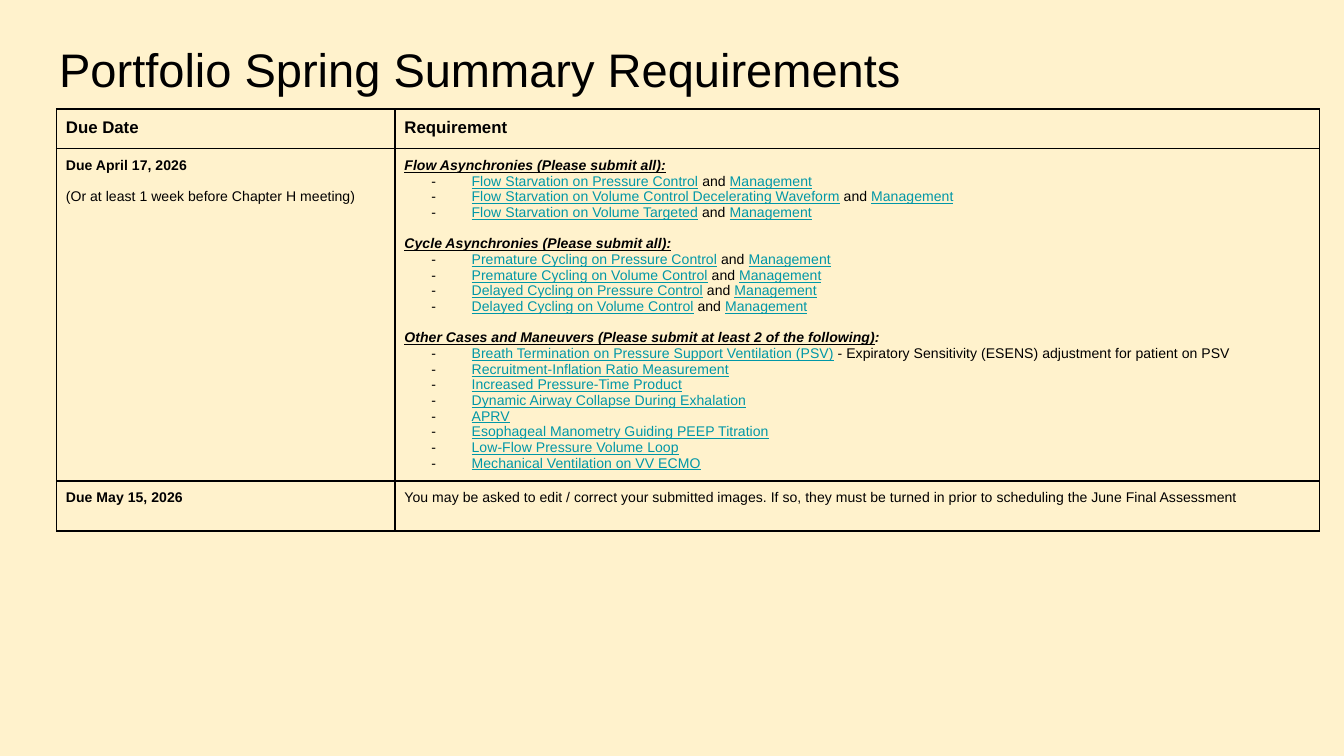
"""Build the slide of portfolio requirements and due dates."""
import pptx
import pptx.dml.color
import pptx.enum.text
import pptx.oxml
import pptx.oxml.ns
import pptx.util

Pt = pptx.util.Pt
INK, LINK, CREAM = "000000", "0097A7", "FFF2CC"
LINE = 8.4


def color(value):
    return pptx.dml.color.RGBColor.from_string(value)


def element(content):
    tag, rest = content.split(" ", 1)
    namespace = pptx.oxml.ns.nsdecls("a")
    return pptx.oxml.parse_xml(f"<a:{tag} {namespace} {rest}")


class Board:
    def __init__(self, deck, font="Arial"):
        self.font = font
        self.page = deck.slides.add_slide(deck.slide_layouts[5])
        self.page.background.fill.solid()
        self.page.background.fill.fore_color.rgb = color(CREAM)

    def span(self, para, text, size=7.5, ink=INK, **marks):
        span = para.add_run()
        span.text = text
        span.font.name, span.font.size = self.font, Pt(size)
        span.font.color.rgb = color(ink)
        for mark, value in marks.items():
            setattr(span.font, mark, value)

    def title(self, text, left, top, width, height):
        box = self.page.shapes.title
        box.left, box.top, box.width, box.height = map(Pt, (left, top, width, height))
        frame = box.text_frame
        frame.auto_size = pptx.enum.text.MSO_AUTO_SIZE.NONE
        frame.vertical_anchor = pptx.enum.text.MSO_ANCHOR.MIDDLE
        frame.margin_left = frame.margin_right = Pt(7.2)
        frame.margin_top = frame.margin_bottom = Pt(7.2)
        para = frame.paragraphs[0]
        para.alignment = pptx.enum.text.PP_ALIGN.LEFT
        self.span(para, text, 25.2)

    def table(self, left, top, widths, heights):
        frame = self.page.shapes.add_table(
            len(heights), len(widths), Pt(left), Pt(top), Pt(sum(widths)), Pt(sum(heights)))
        table = frame.table
        table.first_row = table.horz_banding = False
        for column, width in zip(table.columns, widths):
            column.width = Pt(width)
        for row, height in zip(table.rows, heights):
            row.height = Pt(height)
        for cell in table.iter_cells():
            self.outline(cell)
        return table

    def outline(self, cell):
        cell.margin_left = cell.margin_right = Pt(5)
        cell.margin_top = cell.margin_bottom = Pt(5)
        properties = cell._tc.get_or_add_tcPr()
        for side in ("lnL", "lnR", "lnT", "lnB"):
            properties.append(element(
                f'{side} w="{Pt(1)}"><a:solidFill><a:srgbClr val="{INK}"/>'
                f"</a:solidFill></a:{side}>"))
        cell.fill.background()

    def line(self, cell, gap=0):
        frame = cell.text_frame
        para = frame.add_paragraph() if frame.text else frame.paragraphs[0]
        para.line_spacing, para.space_before = Pt(LINE), Pt(gap)
        return para

    def heading(self, cell, text, tail, gap):
        para = self.line(cell, gap)
        self.span(para, text, bold=True, italic=True, underline=True)
        if tail:
            self.span(para, tail, bold=True, italic=True)

    def bullet(self, cell, link, note="", second=""):
        para = self.line(cell)
        properties = para._p.get_or_add_pPr()
        properties.set("marL", str(Pt(36)))
        properties.set("indent", str(-Pt(21.6)))
        properties.append(element(f'buClr ><a:srgbClr val="{INK}"/></a:buClr>'))
        properties.append(element(f'buFont typeface="{self.font}"/>'))
        properties.append(element('buChar char="-"/>'))
        self.span(para, link, ink=LINK, underline=True)
        if note:
            self.span(para, note)
        if second:
            self.span(para, second, ink=LINK, underline=True)


def managed(*names):
    return [(name, " and ", "Management") for name in names]


GROUPS = [
    ("Flow Asynchronies (Please submit all):", "", managed(
        "Flow Starvation on Pressure Control",
        "Flow Starvation on Volume Control Decelerating Waveform",
        "Flow Starvation on Volume Targeted")),
    ("Cycle Asynchronies (Please submit all):", "", managed(
        "Premature Cycling on Pressure Control",
        "Premature Cycling on Volume Control",
        "Delayed Cycling on Pressure Control",
        "Delayed Cycling on Volume Control")),
    ("Other Cases and Maneuvers (Please submit at least 2 of the following)", ":", [
        ("Breath Termination on Pressure Support Ventilation (PSV)",
         " - Expiratory Sensitivity (ESENS) adjustment for patient on PSV"),
        ("Recruitment-Inflation Ratio Measurement",),
        ("Increased Pressure-Time Product",),
        ("Dynamic Airway Collapse During Exhalation",),
        ("APRV",),
        ("Esophageal Manometry Guiding PEEP Titration",),
        ("Low-Flow Pressure Volume Loop",),
        ("Mechanical Ventilation on VV ECMO",)]),
]


def main():
    deck = pptx.Presentation()
    deck.slide_width, deck.slide_height = Pt(720), Pt(405)
    board = Board(deck)
    board.title("Portfolio Spring Summary Requirements", 24.5, 14, 671, 45.4)

    table = board.table(30.3, 58.4, (181.4, 495.2), (21.2, 178, 26.8))
    for column, text in enumerate(("Due Date", "Requirement")):
        board.span(table.cell(0, column).text_frame.paragraphs[0], text, 9, bold=True)

    for row, text in ((1, "Due April 17, 2026"), (2, "Due May 15, 2026")):
        board.span(board.line(table.cell(row, 0)), text, bold=True)
    board.span(board.line(table.cell(1, 0), LINE),
               "(Or at least 1 week before Chapter H meeting)")

    requirements = table.cell(1, 1)
    for index, (text, tail, items) in enumerate(GROUPS):
        board.heading(requirements, text, tail, LINE if index else 0)
        for item in items:
            board.bullet(requirements, *item)

    board.span(board.line(table.cell(2, 1)),
               "You may be asked to edit / correct your submitted images. If so, they must "
               "be turned in prior to scheduling the June Final Assessment")
    deck.save("out.pptx")


if __name__ == "__main__":
    main()
